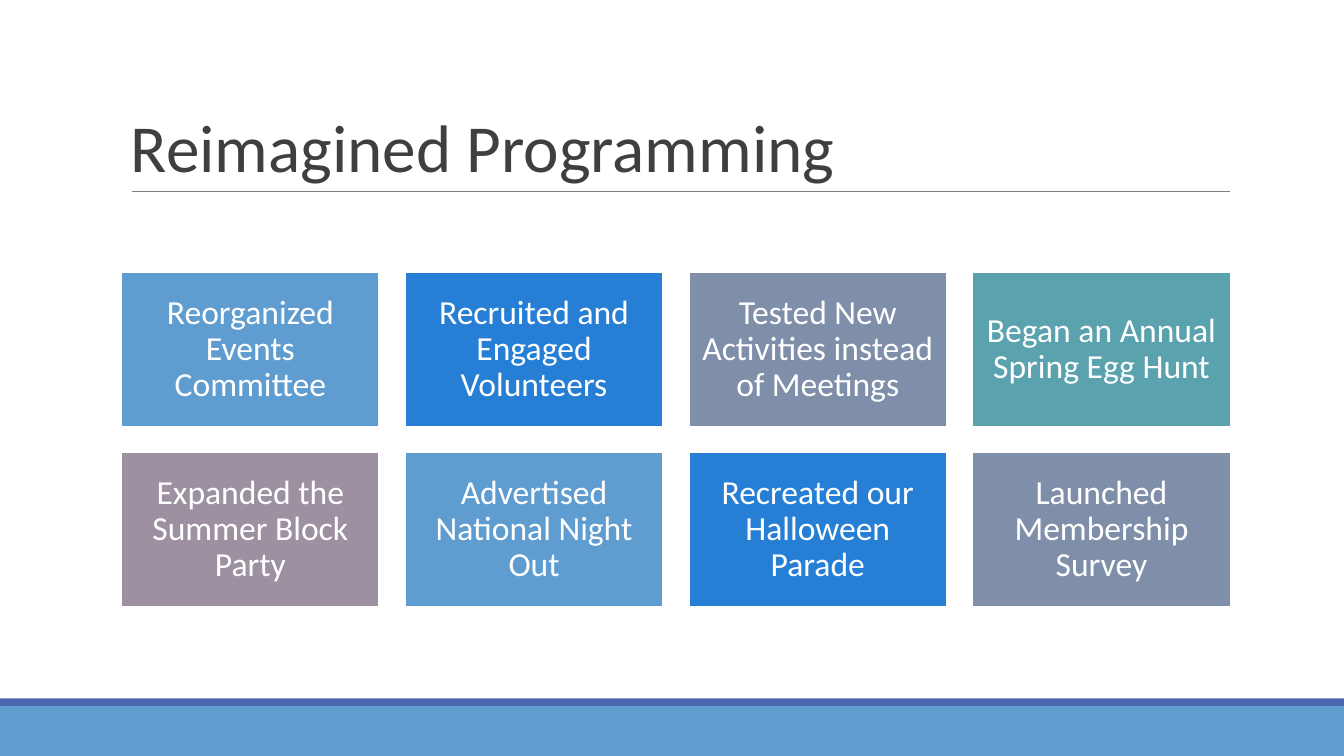
from pptx import Presentation
from pptx.dml.color import RGBColor
from pptx.enum.shapes import MSO_CONNECTOR as Connector, MSO_SHAPE as Shape
from pptx.enum.text import MSO_ANCHOR as Anchor, PP_ALIGN as Align
from pptx.oxml.ns import qn
from pptx.util import Cm, Pt
from lxml.etree import SubElement

WHITE = RGBColor(0xFF, 0xFF, 0xFF)
CHARCOAL = RGBColor(0x3F, 0x3F, 0x3F)
GRAY = RGBColor(0x7F, 0x7F, 0x7F)
INDIGO = RGBColor(0x4A, 0x66, 0xAC)
FOOTER_BLUE = RGBColor(0x62, 0x9D, 0xD1)
SKY = RGBColor(0x5F, 0x9D, 0xD1)
BLUE = RGBColor(0x26, 0x7F, 0xD5)
SLATE = RGBColor(0x7F, 0x8F, 0xA9)
TEAL = RGBColor(0x5A, 0xA2, 0xAE)
MAUVE = RGBColor(0x9D, 0x90, 0xA0)

TILE_COLORS = [SKY, BLUE, SLATE, TEAL, MAUVE]
ACTIVITIES = [
    "Reorganized Events Committee",
    "Recruited and Engaged Volunteers",
    "Tested New Activities instead of Meetings",
    "Began an Annual Spring Egg Hunt",
    "Expanded the Summer Block Party",
    "Advertised National Night Out",
    "Recreated our Halloween Parade",
    "Launched Membership Survey",
]
COLUMNS = 4
TILE_WIDTH, TILE_HEIGHT = 6.5, 3.89
GAP = 0.65
GRID_LEFT, GRID_TOP = 3.06, 6.86


def write_text(box, text, *, size, color, align, anchor, spacing, inset_y):
    frame = box.text_frame
    frame.word_wrap = True
    frame.vertical_anchor = anchor
    frame.margin_left = frame.margin_right = Cm(0.25)
    frame.margin_top = frame.margin_bottom = Cm(inset_y)
    para = frame.paragraphs[0]
    para.alignment = align
    para.line_spacing = spacing
    span = para.add_run()
    span.text = text
    span.font.name = "Calibri"
    span.font.size = Pt(size)
    span.font.color.rgb = color


def add_block(page, left, top, width, height, fill, outline=None):
    block = page.shapes.add_shape(
        Shape.RECTANGLE, Cm(left), Cm(top), Cm(width), Cm(height))
    block.shadow.inherit = False
    block.fill.solid()
    block.fill.fore_color.rgb = fill
    if outline is None:
        block.line.fill.background()
    else:
        block.line.color.rgb = outline
        block.line.width = Pt(1.25)
    return block


def add_rule(page, left, right, y):
    rule = page.shapes.add_connector(
        Connector.STRAIGHT, Cm(left), Cm(y), Cm(right), Cm(y))
    rule.line.color.rgb = GRAY
    rule.line.width = Pt(0.75)
    SubElement(rule._element.spPr, qn("a:effectLst"))


def add_title(page, text):
    box = page.shapes.add_textbox(Cm(3.05), Cm(0.79), Cm(27.94), Cm(4.03))
    write_text(box, text, size=48, color=CHARCOAL, align=Align.LEFT,
               anchor=Anchor.BOTTOM, spacing=0.85, inset_y=0.13)


def add_tiles(page):
    for index, activity in enumerate(ACTIVITIES):
        row, column = divmod(index, COLUMNS)
        tile = add_block(
            page,
            GRID_LEFT + column * (TILE_WIDTH + GAP),
            GRID_TOP + row * (TILE_HEIGHT + GAP),
            TILE_WIDTH, TILE_HEIGHT,
            TILE_COLORS[index % len(TILE_COLORS)], outline=WHITE)
        write_text(tile, activity, size=24, color=WHITE, align=Align.CENTER,
                   anchor=Anchor.MIDDLE, spacing=0.9, inset_y=0.25)


def main():
    deck = Presentation()
    deck.slide_width, deck.slide_height = Cm(33.87), Cm(19.05)
    page = deck.slides.add_slide(deck.slide_layouts[6])
    add_block(page, 0, 17.78, 33.87, 1.27, FOOTER_BLUE)
    add_block(page, 0, 17.6, 33.87, 0.19, INDIGO)
    add_rule(page, 3.32, 31, 4.82)
    add_title(page, "Reimagined Programming")
    add_tiles(page)
    deck.save("out.pptx")


if __name__ == "__main__":
    main()
